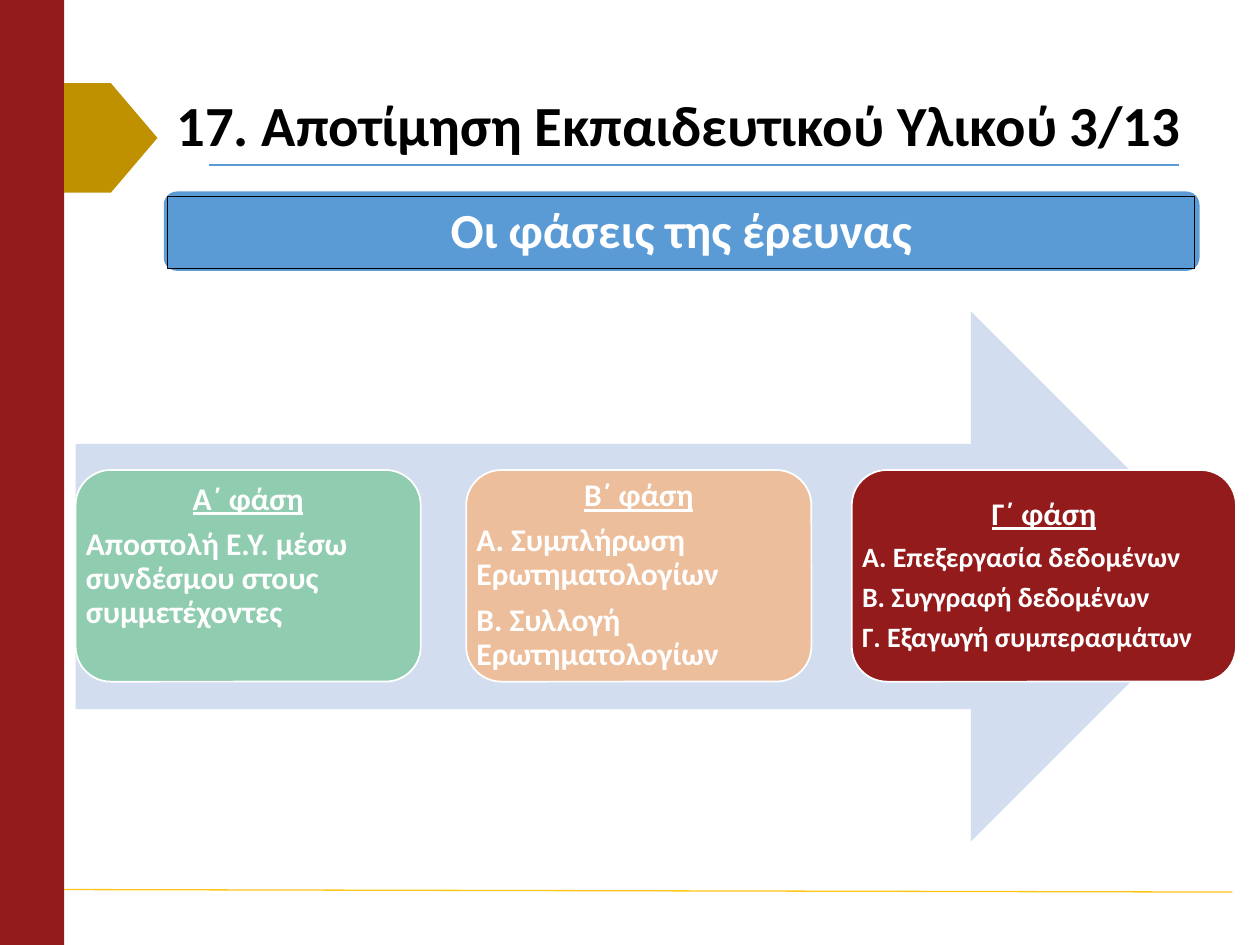
from pptx import Presentation
from pptx.dml.color import RGBColor
from pptx.enum import shapes, text
from pptx.oxml.ns import qn
from pptx.util import Inches, Pt
from lxml import etree

FONT = "Calibri"
WHITE, BLACK = "FFFFFF", "000000"
BLUE, DARK_RED = "5B9BD5", "931B1B"
PRESET = shapes.MSO_SHAPE
LEFT, CENTER = text.PP_ALIGN.LEFT, text.PP_ALIGN.CENTER

TITLE = "17. Αποτίμηση Εκπαιδευτικού Υλικού 3/13"
BANNER = "Οι φάσεις της έρευνας"
PHASES = [
    dict(left=0.6, width=2.74, fill="90CCAF", size=18, bottom=0.3,
         heading="Α΄ φάση",
         steps=["Αποστολή Ε.Υ. μέσω συνδέσμου στους συμμετέχοντες"]),
    dict(left=3.7, width=2.74, fill="EDBE9B", size=18, bottom=0,
         heading="Β΄ φάση",
         steps=["Α. Συμπλήρωση Ερωτηματολογίων",
                "Β. Συλλογή Ερωτηματολογίων"]),
    dict(left=6.76, width=3.05, fill=DARK_RED, size=16, bottom=0,
         heading="Γ΄ φάση",
         steps=["Α. Επεξεργασία δεδομένων",
                "Β. Συγγραφή δεδομένων",
                "Γ. Εξαγωγή συμπερασμάτων"]),
]
CARD_TOP, CARD_HEIGHT = 3.73, 1.68
RULES = [((1.66, 1.31), (9.36, 1.31), BLUE),
         ((0.51, 7.06), (9.78, 7.08), "FFC61A")]


def color(value):
    return RGBColor.from_string(value)


def add_box(page, preset, left, top, width, height, fill, line=None, weight=1):
    box = page.shapes.add_shape(preset, Inches(left), Inches(top),
                                Inches(width), Inches(height))
    box.shadow.inherit = False
    box.fill.solid()
    box.fill.fore_color.rgb = color(fill)
    if line:
        box.line.color.rgb = color(line)
        box.line.width = Pt(weight)
    else:
        box.line.fill.background()
    return box


def add_rule(page, start, end, line):
    rule = page.shapes.add_connector(
        shapes.MSO_CONNECTOR.STRAIGHT, *map(Inches, start + end))
    rule.line.color.rgb = color(line)
    rule.line.width = Pt(0.75)
    etree.SubElement(rule._element.spPr, qn("a:effectLst"))


def set_frame(box, left=0, top=0, right=0, bottom=0):
    """Set the insets, wrapping and middle anchor of a shape's text."""
    frame = box.text_frame
    frame.word_wrap = True
    frame.auto_size = text.MSO_AUTO_SIZE.NONE
    frame.vertical_anchor = text.MSO_ANCHOR.MIDDLE
    frame.margin_left, frame.margin_right = Inches(left), Inches(right)
    frame.margin_top, frame.margin_bottom = Inches(top), Inches(bottom)
    return frame


def write(para, words, size=18, fill=WHITE, align=LEFT, underline=False, after=0):
    para.alignment = align
    para.line_spacing = 0.9
    para.space_before = Pt(0)
    para.space_after = Pt(after)
    span = para.add_run()
    span.text = words
    span.font.name = FONT
    span.font.size = Pt(size)
    span.font.bold = True
    span.font.underline = underline
    span.font.color.rgb = color(fill)


def add_phase(page, phase):
    card = add_box(page, PRESET.ROUNDED_RECTANGLE, phase["left"], CARD_TOP,
                   phase["width"], CARD_HEIGHT, phase["fill"], line=WHITE)
    frame = set_frame(card, bottom=phase["bottom"])
    write(frame.paragraphs[0], phase["heading"], align=CENTER,
          underline=True, after=6.3)
    for step in phase["steps"]:
        write(frame.add_paragraph(), step, size=phase["size"],
              after=0.35 * phase["size"])


def main():
    deck = Presentation()
    deck.slide_width, deck.slide_height = Inches(10), Inches(7.5)
    page = deck.slides.add_slide(deck.slide_layouts[5])

    add_box(page, PRESET.RECTANGLE, 0, 0, 0.51, 7.5, DARK_RED)
    for start, end, line in RULES:
        add_rule(page, start, end, line)
    tag = add_box(page, PRESET.PENTAGON, 0.51, 0.66, 0.74, 0.87, "BF9000")
    tag.adjustments[0] = 0.5

    title = page.shapes.title
    title.left, title.top = Inches(1.3), Inches(0.6)
    title.width, title.height = Inches(8.33), Inches(0.84)
    frame = set_frame(title, 0.1, 0.05, 0.1, 0.05)
    write(frame.paragraphs[0], TITLE, size=32.4, fill=BLACK)

    add_box(page, PRESET.ROUNDED_RECTANGLE, 1.3, 1.52, 8.22, 0.63, BLUE)
    banner = add_box(page, PRESET.RECTANGLE, 1.33, 1.56, 8.15, 0.57, BLUE,
                     line=BLACK, weight=0.75)
    frame = set_frame(banner, 0.12, 0.12, 0.12, 0.12)
    write(frame.paragraphs[0], BANNER, size=28, align=CENTER)

    add_box(page, PRESET.RIGHT_ARROW, 0.6, 2.47, 9.21, 4.21, "D2DEEF")
    for phase in PHASES:
        add_phase(page, phase)

    deck.save("out.pptx")


if __name__ == "__main__":
    main()
